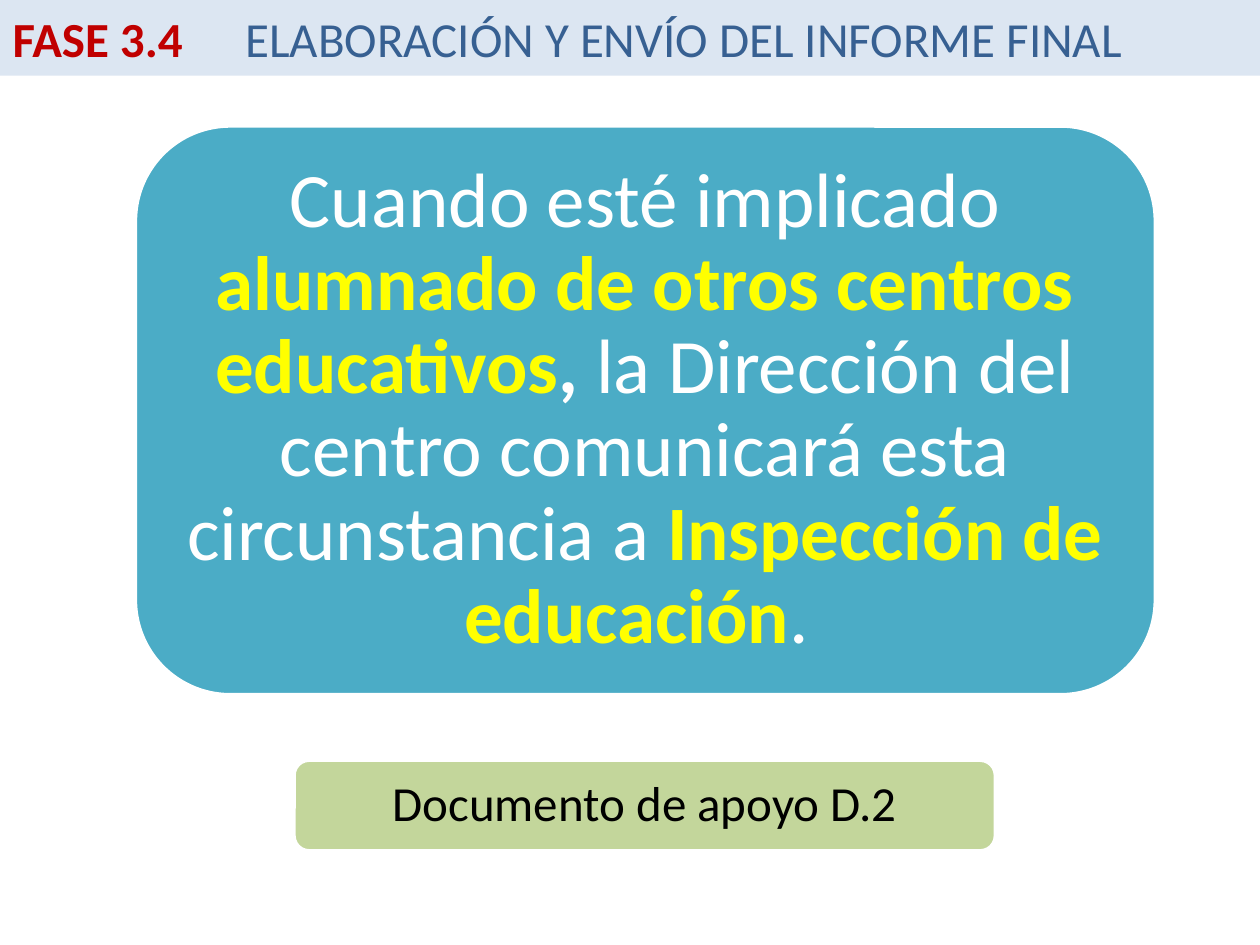
from dataclasses import dataclass

import lxml.etree
import pptx
import pptx.dml.color
import pptx.enum.shapes
import pptx.enum.text
import pptx.oxml.ns
import pptx.util

Pt = pptx.util.Pt
FONT = "Calibri"
COLORS = {
    "band": "DCE6F2", "phase": "C00000", "heading": "376092",
    "notice": "4BACC6", "support": "C3D69B",
    "white": "FFFFFF", "yellow": "FFFF00", "black": "000000",
}


@dataclass
class Span:
    text: str
    color: str
    bold: bool = False


@dataclass
class Box:
    left: float
    top: float
    width: float
    height: float
    fill: str
    size: float
    inset: float
    spans: list[Span]


def rgb(name: str) -> pptx.dml.color.RGBColor:
    return pptx.dml.color.RGBColor.from_string(COLORS[name])


def place(shape, box: Box) -> None:
    """Position, fill and write a shape as its box describes."""
    shape.left, shape.top = Pt(box.left), Pt(box.top)
    shape.width, shape.height = Pt(box.width), Pt(box.height)
    shape.fill.solid()
    shape.fill.fore_color.rgb = rgb(box.fill)

    frame = shape.text_frame
    frame.word_wrap = True
    frame.auto_size = pptx.enum.text.MSO_AUTO_SIZE.NONE
    frame.vertical_anchor = pptx.enum.text.MSO_ANCHOR.MIDDLE
    frame.margin_left = frame.margin_right = Pt(box.inset)
    frame.margin_top = frame.margin_bottom = Pt(box.inset)
    for span in box.spans:
        run = frame.paragraphs[0].add_run()
        run.text = span.text
        run.font.name = FONT
        run.font.size = Pt(box.size)
        run.font.bold = span.bold
        run.font.color.rgb = rgb(span.color)


def add_rounded_box(slide, box: Box) -> None:
    shape = slide.shapes.add_shape(
        pptx.enum.shapes.MSO_SHAPE.ROUNDED_RECTANGLE, 0, 0, 0, 0)
    shape.shadow.inherit = False
    shape.line.color.rgb = rgb("white")
    shape.line.width = Pt(2)
    place(shape, box)
    paragraph = shape.text_frame.paragraphs[0]
    paragraph.alignment = pptx.enum.text.PP_ALIGN.CENTER
    paragraph.line_spacing = 0.9


def add_tab_stop(paragraph, position: float) -> None:
    qn = pptx.oxml.ns.qn
    properties = paragraph._p.get_or_add_pPr()
    tabs = lxml.etree.SubElement(properties, qn("a:tabLst"))
    lxml.etree.SubElement(tabs, qn("a:tab"), pos=str(Pt(position)), algn="l")


HEADER = Box(0, 0, 720, 43.2, "band", 28, 7.2, [
    Span("FASE 3.4\t", "phase", True),
    Span("ELABORACIÓN Y ENVÍO DEL INFORME FINAL", "heading"),
])

BOXES = [
    Box(77.4, 72, 582.8, 325, "notice", 44, 13, [
        Span("Cuando esté implicado ", "white"),
        Span("alumnado de otros centros educativos", "yellow", True),
        Span(",", "white", True),
        Span(" la Dirección del centro comunicará esta circunstancia a ", "white"),
        Span("Inspección de educación", "yellow", True),
        Span(". ", "white"),
    ]),
    Box(168, 434.4, 400.8, 51.8, "support", 28, 8.64, [
        Span("Documento de apoyo D.2", "black"),
    ]),
]


def main() -> None:
    presentation = pptx.Presentation()
    presentation.slide_width, presentation.slide_height = Pt(720), Pt(540)
    slide = presentation.slides.add_slide(presentation.slide_layouts[5])

    # Title band with the phase number and its heading
    title = slide.shapes.title
    place(title, HEADER)
    title.text_frame.margin_top = title.text_frame.margin_bottom = Pt(3.6)
    paragraph = title.text_frame.paragraphs[0]
    paragraph.alignment = pptx.enum.text.PP_ALIGN.LEFT
    add_tab_stop(paragraph, 133)

    # Notice and supporting document
    for box in BOXES:
        add_rounded_box(slide, box)

    presentation.save("out.pptx")


if __name__ == "__main__":
    main()
